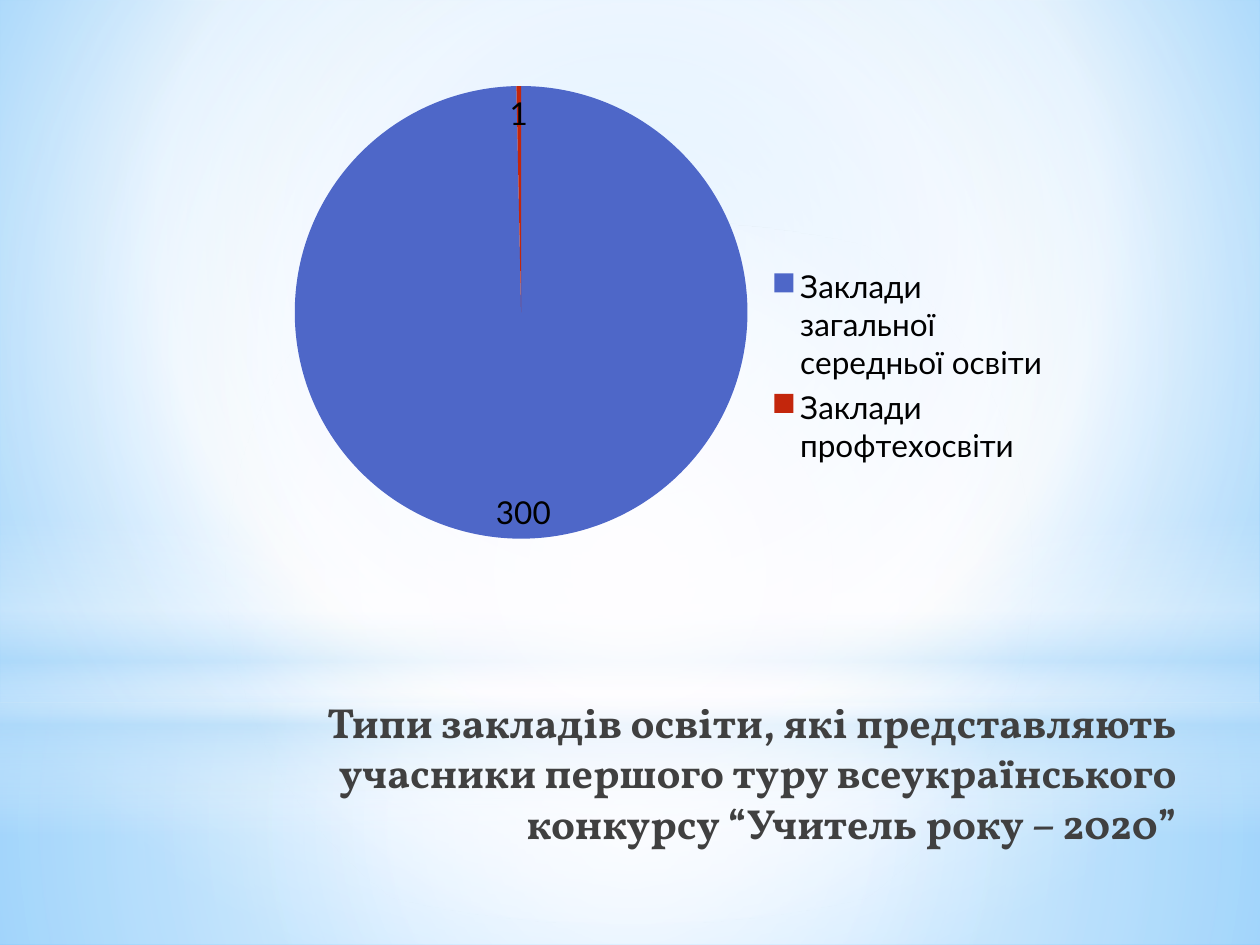
from dataclasses import dataclass
from typing import Optional

from lxml import etree
from pptx import Presentation
from pptx.chart.data import CategoryChartData
from pptx.dml.color import RGBColor
from pptx.enum.chart import XL_CHART_TYPE, XL_LABEL_POSITION, XL_LEGEND_POSITION
from pptx.enum.shapes import MSO_SHAPE
from pptx.enum.text import MSO_ANCHOR, MSO_AUTO_SIZE, PP_ALIGN
from pptx.oxml.ns import qn
from pptx.util import Emu, Pt

PIE = XL_CHART_TYPE.PIE
INSIDE_END = XL_LABEL_POSITION.INSIDE_END
LEGEND_RIGHT = XL_LEGEND_POSITION.RIGHT
RECTANGLE = MSO_SHAPE.RECTANGLE
OVAL = MSO_SHAPE.OVAL
TOP = MSO_ANCHOR.TOP
NO_AUTOFIT = MSO_AUTO_SIZE.NONE
ALIGN_RIGHT = PP_ALIGN.RIGHT

EMU_PER_PX = 914400 / 126
SLIDE_WIDTH, SLIDE_HEIGHT = 1260, 945
TITLE_ONLY_LAYOUT = 5

WHITE = RGBColor(0xFF, 0xFF, 0xFF)
SOFT_WHITE = RGBColor(0xFF, 0xFE, 0xFF)
PALE_BLUE = RGBColor(0xB4, 0xDC, 0xFA)
SKY_BLUE = RGBColor(0x9E, 0xD5, 0xFF)
DEEP_SKY = RGBColor(0x5B, 0xB9, 0xFF)
BLACK = RGBColor(0x00, 0x00, 0x00)
CHARCOAL = RGBColor(0x40, 0x40, 0x40)
PIE_BLUE = RGBColor(0x4E, 0x67, 0xC8)
PIE_RED = RGBColor(0xC3, 0x26, 0x0C)


@dataclass(frozen=True)
class Box:
    left: int
    top: int
    width: int
    height: int

    def emu(self) -> tuple:
        return tuple(px(value) for value in (self.left, self.top, self.width, self.height))


@dataclass(frozen=True)
class Stop:
    position: int
    color: RGBColor
    opacity: int = 100


@dataclass(frozen=True)
class Gradient:
    stops: tuple
    focus: Optional[tuple] = (50, 50, 50, 50)


@dataclass(frozen=True)
class Glow:
    preset: int
    box: Box
    gradient: Gradient


BACKGROUND = Gradient(
    (Stop(0, SKY_BLUE), Stop(60, WHITE), Stop(100, DEEP_SKY)), (20, 10, 20, 60)
)
GLOWS = (
    Glow(RECTANGLE, Box(0, 703, SLIDE_WIDTH, 242), Gradient(
        (Stop(0, SOFT_WHITE, 91), Stop(37, SOFT_WHITE, 76), Stop(100, PALE_BLUE, 79)))),
    Glow(RECTANGLE, Box(0, 0, SLIDE_WIDTH, 703), Gradient(
        (Stop(0, SOFT_WHITE, 89), Stop(48, SOFT_WHITE, 62), Stop(100, PALE_BLUE, 79)))),
    Glow(RECTANGLE, Box(0, 519, SLIDE_WIDTH, 315), Gradient(
        (Stop(0, SOFT_WHITE, 0), Stop(29, SOFT_WHITE, 30), Stop(45, PALE_BLUE, 40),
         Stop(55, SOFT_WHITE, 26), Stop(65, PALE_BLUE, 60), Stop(100, SOFT_WHITE, 0)), None)),
    Glow(OVAL, Box(0, 221, SLIDE_WIDTH, 703), Gradient(
        (Stop(0, SOFT_WHITE), Stop(56, SOFT_WHITE, 0)))),
)

TITLE_BOX = Box(292, 690, 897, 158)
TITLE_TEXT = (
    "Типи закладів освіти, які представляють учасники першого туру "
    "всеукраїнського конкурсу “Учитель року – 2020”"
)
TITLE_FONT = {"name": "Vollkorn", "size": Pt(24), "bold": True}

CHART_BOX = Box(223, 86, 840, 559)
CHART_FONT = {"name": "Lato", "size": Pt(18)}
PLOT_LAYOUT = {
    "layoutTarget": "inner", "xMode": "edge", "yMode": "edge",
    "x": 0.08, "y": 0, "w": 0.55, "h": 0.81,
}
SCHOOLS = {
    "Заклади загальної середньої освіти": (300, PIE_BLUE),
    "Заклади профтехосвіти": (1, PIE_RED),
}


def px(value: int) -> Emu:
    return Emu(round(value * EMU_PER_PX))


def apply_format(target, values: dict) -> None:
    for name, value in values.items():
        setattr(target, name, value)


def paint_gradient(fill, owner, gradient: Gradient) -> None:
    fill.gradient()
    node = next(owner.iter(qn("a:gradFill")))
    for child in list(node):
        node.remove(child)
    stop_list = etree.SubElement(node, qn("a:gsLst"))
    for stop in gradient.stops:
        mark = etree.SubElement(stop_list, qn("a:gs"), pos=str(stop.position * 1000))
        color = etree.SubElement(mark, qn("a:srgbClr"), val=str(stop.color))
        if stop.opacity < 100:
            etree.SubElement(color, qn("a:alpha"), val=str(stop.opacity * 1000))
    if gradient.focus is None:
        etree.SubElement(node, qn("a:lin"), ang="5400000", scaled="0")
    else:
        path = etree.SubElement(node, qn("a:path"), path="circle")
        sides = {side: str(part * 1000) for side, part in zip("ltrb", gradient.focus)}
        etree.SubElement(path, qn("a:fillToRect"), sides)


def draw_glow(page, glow: Glow) -> None:
    shape = page.shapes.add_shape(glow.preset, *glow.box.emu())
    shape.shadow.inherit = False
    shape.line.fill.background()
    paint_gradient(shape.fill, shape.element, glow.gradient)
    page.shapes.title.element.addprevious(shape.element)


def write_title(page) -> None:
    title = page.shapes.title
    title.left, title.top, title.width, title.height = TITLE_BOX.emu()
    frame = title.text_frame
    apply_format(frame, {"word_wrap": True, "vertical_anchor": TOP, "auto_size": NO_AUTOFIT})
    para = frame.paragraphs[0]
    para.alignment = ALIGN_RIGHT
    span = para.add_run()
    span.text = TITLE_TEXT
    apply_format(span.font, TITLE_FONT)
    span.font.color.rgb = CHARCOAL


def place_plot(chart) -> None:
    plot_area = next(chart.element.iter(qn("c:plotArea")))
    for old_layout in plot_area.findall(qn("c:layout")):
        plot_area.remove(old_layout)
    layout = etree.Element(qn("c:layout"))
    manual = etree.SubElement(layout, qn("c:manualLayout"))
    for name, value in PLOT_LAYOUT.items():
        etree.SubElement(manual, qn(f"c:{name}"), val=str(value))
    plot_area.insert(0, layout)


def draw_pie(page) -> None:
    data = CategoryChartData()
    data.categories = list(SCHOOLS)
    data.add_series("Series 1", [count for count, _ in SCHOOLS.values()])
    chart = page.shapes.add_chart(PIE, *CHART_BOX.emu(), data).chart
    apply_format(chart, {"has_title": False, "has_legend": True})
    apply_format(chart.legend, {"position": LEGEND_RIGHT, "include_in_layout": False})
    apply_format(chart.font, CHART_FONT)
    chart.font.color.rgb = BLACK
    plot = chart.plots[0]
    apply_format(plot, {"vary_by_categories": True, "has_data_labels": True})
    apply_format(plot.data_labels, {"show_value": True, "show_percentage": False,
                                    "position": INSIDE_END})
    for index, (_, color) in enumerate(SCHOOLS.values()):
        fill = plot.series[0].points[index].format.fill
        fill.solid()
        fill.fore_color.rgb = color
    place_plot(chart)


def main() -> None:
    deck = Presentation()
    deck.slide_width, deck.slide_height = px(SLIDE_WIDTH), px(SLIDE_HEIGHT)
    page = deck.slides.add_slide(deck.slide_layouts[TITLE_ONLY_LAYOUT])
    paint_gradient(page.background.fill, page.element, BACKGROUND)
    for glow in GLOWS:
        draw_glow(page, glow)
    write_title(page)
    draw_pie(page)
    deck.save("out.pptx")


if __name__ == "__main__":
    main()
